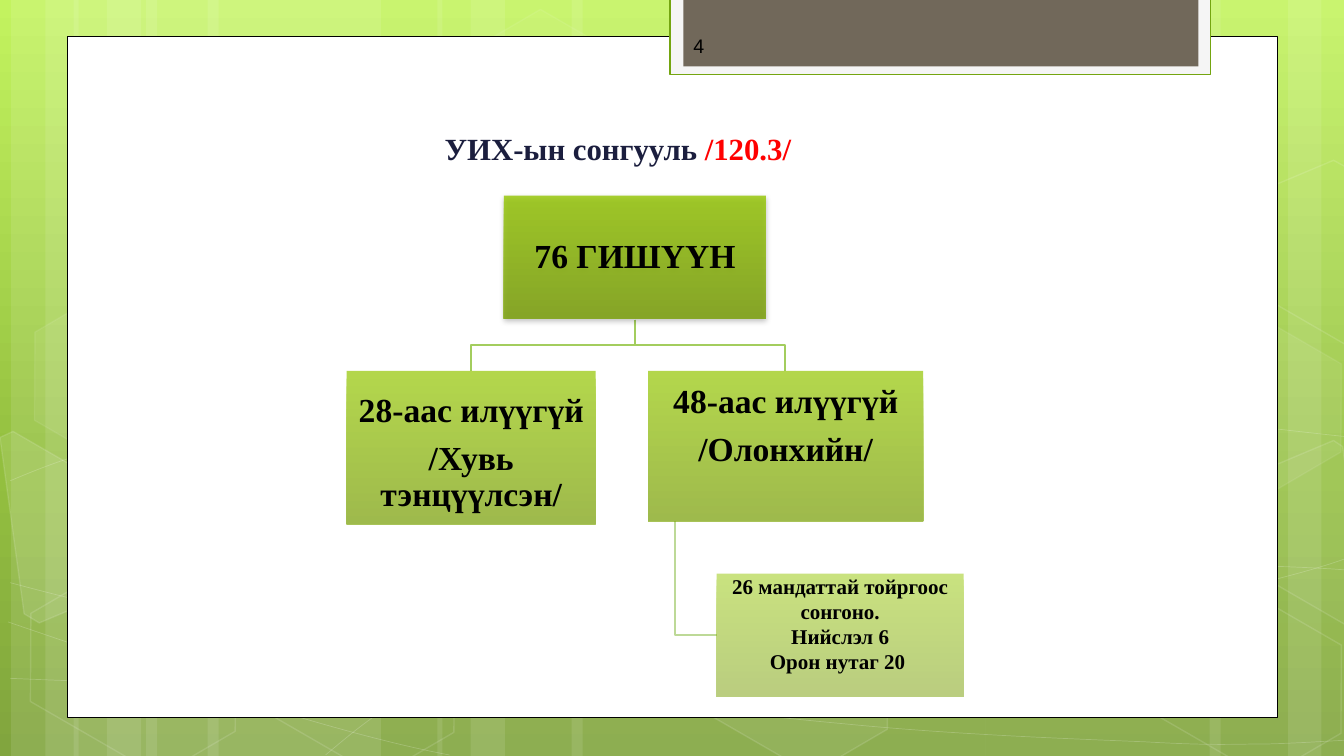
from lxml.etree import SubElement
from pptx import Presentation
from pptx.dml.color import RGBColor
from pptx.enum.shapes import MSO_SHAPE
from pptx.enum.text import MSO_ANCHOR, PP_ALIGN
from pptx.oxml.ns import qn
from pptx.util import Inches, Pt

WHITE, BLACK = "FFFFFF", "000000"
LIME, DARK_LIME = "94C600", "769D00"
SERIF = "Times New Roman"

STRIPES = [(1.45, 2.33), (0.11, 0.67), (0.45, 1.11), (2.06, 2.33), (0.73, 0.67), (1.06, 1.11),
           (9.78, 2.33), (12.78, 0.67), (12, 1.11), (5.67, 4.11), (4.34, 0.67), (4.67, 1.11)]

WAVES = [
    [(0.1, 6.73), (0.82, 6.76), (1.54, 6.79), (2.54, 6.78), (3.54, 6.77), (4.77, 6.75), (6.1, 6.65),
     (7.44, 6.55), (9.33, 6.36), (10.55, 6.17), (11.78, 5.98), (13.03, 5.68), (13.43, 5.51)],
    [(0.1, 4.77), (0.48, 4.61), (0.86, 4.46), (1.62, 4.31), (2.38, 4.16), (3.45, 3.94), (4.63, 3.87),
     (5.82, 3.8), (7.25, 3.79), (8.72, 3.87), (10.19, 3.95), (12.63, 4.26), (13.43, 4.34)],
    [(0.08, 6.17), (1.69, 6.72), (3.3, 7.27), (4.46, 7.49)],
    [(0.1, 5.78), (0.51, 5.89), (0.93, 6), (1.71, 6.16), (2.48, 6.31), (3.64, 6.56), (4.75, 6.73),
     (5.86, 6.9), (7.27, 7.08), (8.37, 7.18), (9.48, 7.29), (10.66, 7.33), (11.37, 7.36),
     (12.07, 7.4), (12.25, 7.38), (12.6, 7.38), (12.94, 7.37), (13.19, 7.35), (13.43, 7.34)],
    [(3.23, 7.49), (3.47, 7.29), (3.7, 7.09), (4.03, 6.91), (4.35, 6.73), (4.8, 6.53), (5.17, 6.39),
     (5.54, 6.25), (5.77, 6.19), (6.26, 6.09), (6.75, 5.99), (7.65, 5.85), (8.11, 5.78),
     (8.58, 5.71), (8.65, 5.71), (9.07, 5.69), (9.48, 5.66), (10.13, 5.63), (10.59, 5.62),
     (11.05, 5.61), (11.82, 5.62), (11.82, 5.62), (12.1, 5.62), (12.4, 5.62), (12.7, 5.62),
     (12.95, 5.63), (13.17, 5.64), (13.29, 5.65), (13.41, 5.66), (13.37, 5.65), (13.41, 5.66)],
]

HEXAGONS = [(4.45, 0.36, 4, 8), (6.62, 5.89, 6, 12), (0.15, 5.91, 0, 12), (0.19, 3.12, 7, 8),
            (2.32, 5.92, 0, 12), (11.12, 5.93, 0, 12), (11.12, 3.14, 7, 8)]

CUT_HEXAGONS = [
    ([(0, 4.34), (0.13, 4.28), (1.15, 4.87), (1.27, 5.81), (0.39, 6.18), (0.24, 6.09)], 10),
    ([(12.35, 4.74), (13.23, 4.37), (13.32, 4.43), (13.57, 6.25), (13.49, 6.28), (12.47, 5.69)], 4),
    ([(12.35, 1.96), (13.23, 1.59), (13.34, 1.65), (13.57, 3.46), (13.49, 3.5), (12.47, 2.91)], 0),
]


def rgb(code):
    """Turn a hex string into a colour."""
    return RGBColor.from_string(code)


def set_opacity(part, percent):
    """Make every colour inside an XML part translucent."""
    if percent < 100:
        for color in part.iter(qn("a:srgbClr")):
            SubElement(color, qn("a:alpha")).set("val", str(percent * 1000))


def paint(shape, fill=None, opacity=100, line=None, width=1, line_opacity=100):
    """Set the fill and outline of a shape and drop its shadow."""
    shape.shadow.inherit = False
    if fill:
        shape.fill.solid()
        shape.fill.fore_color.rgb = rgb(fill)
        set_opacity(shape.element, opacity)
    else:
        shape.fill.background()
    if line:
        shape.line.color.rgb = rgb(line)
        shape.line.width = Pt(width)
        set_opacity(shape.element.spPr.find(qn("a:ln")), line_opacity)
    else:
        shape.line.fill.background()
    return shape


def shade(fill, holder, stops, opacity=100):
    """Give a fill a gradient from top to bottom."""
    fill.gradient()
    fill.gradient_angle = 270
    stop_list = next(holder.iter(qn("a:gsLst")))
    for stop in list(stop_list):
        stop_list.remove(stop)
    for position, code in stops:
        stop = SubElement(stop_list, qn("a:gs"), pos=str(position * 1000))
        SubElement(stop, qn("a:srgbClr"), val=code)
    set_opacity(stop_list, opacity)


def add_block(slide, at, kind=MSO_SHAPE.RECTANGLE, **look):
    """Add a painted preset shape."""
    return paint(slide.shapes.add_shape(kind, *map(Inches, at)), **look)


def add_outline(slide, points, close=False, **look):
    """Add an outline through the given points."""
    corners = [(Inches(x), Inches(y)) for x, y in points]
    builder = slide.shapes.build_freeform(*corners[0])
    builder.add_line_segments(corners[1:], close=close)
    return paint(builder.convert_to_shape(), **look)


def add_wave(slide, nodes, **look):
    """Add a chain of cubic curves, three nodes for each curve."""
    wave = add_outline(slide, nodes, **look)
    segments = list(wave.element.iter(qn("a:lnTo")))
    track = segments[0].getparent()
    for index, segment in enumerate(segments):
        if index % 3 == 0:
            curve = SubElement(track, qn("a:cubicBezTo"))
        curve.append(segment[0])
        track.remove(segment)


def write(shape, paragraphs, size, font=SERIF, bold=True, align=PP_ALIGN.CENTER,
          anchor=MSO_ANCHOR.MIDDLE, insets=(0.1, 0.05, 0.1, 0.05), spacing=1, after=0):
    """Fill a shape with paragraphs, each a list of text and colour pairs."""
    frame = shape.text_frame
    frame.word_wrap = True
    frame.vertical_anchor = anchor
    frame.margin_left, frame.margin_top, frame.margin_right, frame.margin_bottom = map(Inches, insets)
    for index, pieces in enumerate(paragraphs):
        paragraph = frame.add_paragraph() if index else frame.paragraphs[0]
        paragraph.alignment = align
        paragraph.line_spacing = spacing
        paragraph.space_after = Pt(after)
        for text, color in pieces:
            run = paragraph.add_run()
            run.text = text
            run.font.name, run.font.size, run.font.bold = font, Pt(size), bold
            run.font.color.rgb = rgb(color)


def add_text(slide, at, paragraphs, size, **form):
    """Add a text box."""
    write(slide.shapes.add_textbox(*map(Inches, at)), paragraphs, size, **form)


def add_member_box(slide, at, lines, opacity, size=24, **form):
    """Add a green box of the hierarchy with its lines of text."""
    box = add_block(slide, at)
    shade(box.fill, box.element, [(0, LIME), (100, DARK_LIME)], opacity)
    write(box, [[(line, BLACK)] for line in lines], size, **form)
    return box


def cast_shadow(shape):
    """Add a soft shadow below a shape."""
    effects = shape.element.spPr.find(qn("a:effectLst"))
    shadow = SubElement(effects, qn("a:outerShdw"), blurRad=str(Pt(4)), dist=str(Pt(2)),
                        dir="5400000", rotWithShape="0")
    SubElement(shadow, qn("a:srgbClr"), val=BLACK)
    set_opacity(shadow, 28)


def add_backdrop(slide):
    """Draw the green background, white sheet and top tab."""
    shade(slide.background.fill, slide.element, [(0, "C3F35F"), (62, "93BF3F"), (100, "81A53E")])
    for left, width in STRIPES:
        add_block(slide, (left, 0, width, 7.5), fill=WHITE, opacity=10)
    for nodes in WAVES:
        add_wave(slide, nodes, line=WHITE, width=0.5, line_opacity=20)
    for left, top, opacity, line_opacity in HEXAGONS:
        hexagon = add_block(slide, (left, top, 2.34, 1.52), MSO_SHAPE.HEXAGON, fill=WHITE if opacity else None,
                            opacity=opacity, line=WHITE, line_opacity=line_opacity)
        hexagon.adjustments[0] = 0.285
        hexagon.rotation = 30
    for corners, opacity in CUT_HEXAGONS:
        add_outline(slide, corners, close=True, fill=WHITE if opacity else None, opacity=opacity,
                    line=WHITE, line_opacity=12)
    add_block(slide, (0.67, 0.36, 12, 6.76), fill=WHITE, line=BLACK, width=0.5)
    add_block(slide, (6.65, -0.02, 5.36, 0.76), fill="F5F5F5", line="74A510", width=1.25)
    add_block(slide, (6.78, -0.02, 5.11, 0.68), fill="71685A")


def add_hierarchy(slide):
    """Draw the tree of parliament seats."""
    add_outline(slide, [(6.7, 5.17), (6.7, 6.3), (7.11, 6.3)], line="BDD997", width=1.25)
    for child in (7.79, 4.67):
        add_outline(slide, [(6.3, 3.17), (6.3, 3.42), (child, 3.42), (child, 3.68)], line="A3CD5E", width=1.25)
    tree_form = {"spacing": 0.9, "after": 8.4}
    members = add_member_box(slide, (5, 1.94, 2.6, 1.22), ["76 ГИШҮҮН"], 80,
                             insets=(0.02, 0.04, 0.02, 0.02), **tree_form)
    cast_shadow(members)
    add_member_box(slide, (3.44, 3.68, 2.47, 1.52), ["28-аас илүүгүй", "/Хувь тэнцүүлсэн/"], 70,
                   insets=(0.02, 0.14, 0.02, 0.02), **tree_form)
    add_member_box(slide, (6.43, 3.68, 2.73, 1.49), ["48-аас илүүгүй", "/Олонхийн/"], 70,
                   insets=(0.02, 0.02, 0.02, 0.4), **tree_form)
    add_member_box(slide, (7.11, 5.69, 2.45, 1.22),
                   ["26 мандаттай тойргоос сонгоно.", "Нийслэл 6", "Орон нутаг 20 "], 50, size=15,
                   insets=(0.01, 0.01, 0.01, 0.24))


def main():
    """Build the slide and save it."""
    deck = Presentation()
    deck.slide_width, deck.slide_height = Inches(40 / 3), Inches(7.5)
    slide = deck.slides.add_slide(deck.slide_layouts[6])
    add_backdrop(slide)
    add_text(slide, (6.78, 0.25, 1.94, 0.4), [[("4", BLACK)]], 14, font="Arial", bold=False,
             align=PP_ALIGN.LEFT)
    add_hierarchy(slide)
    add_text(slide, (3.98, 1.24, 4.3, 0.47), [[("УИХ-ын сонгууль ", "1B1E3E"), ("/120.3/", "FF0000")]], 22,
             anchor=MSO_ANCHOR.TOP)
    deck.save("out.pptx")


if __name__ == "__main__":
    main()
